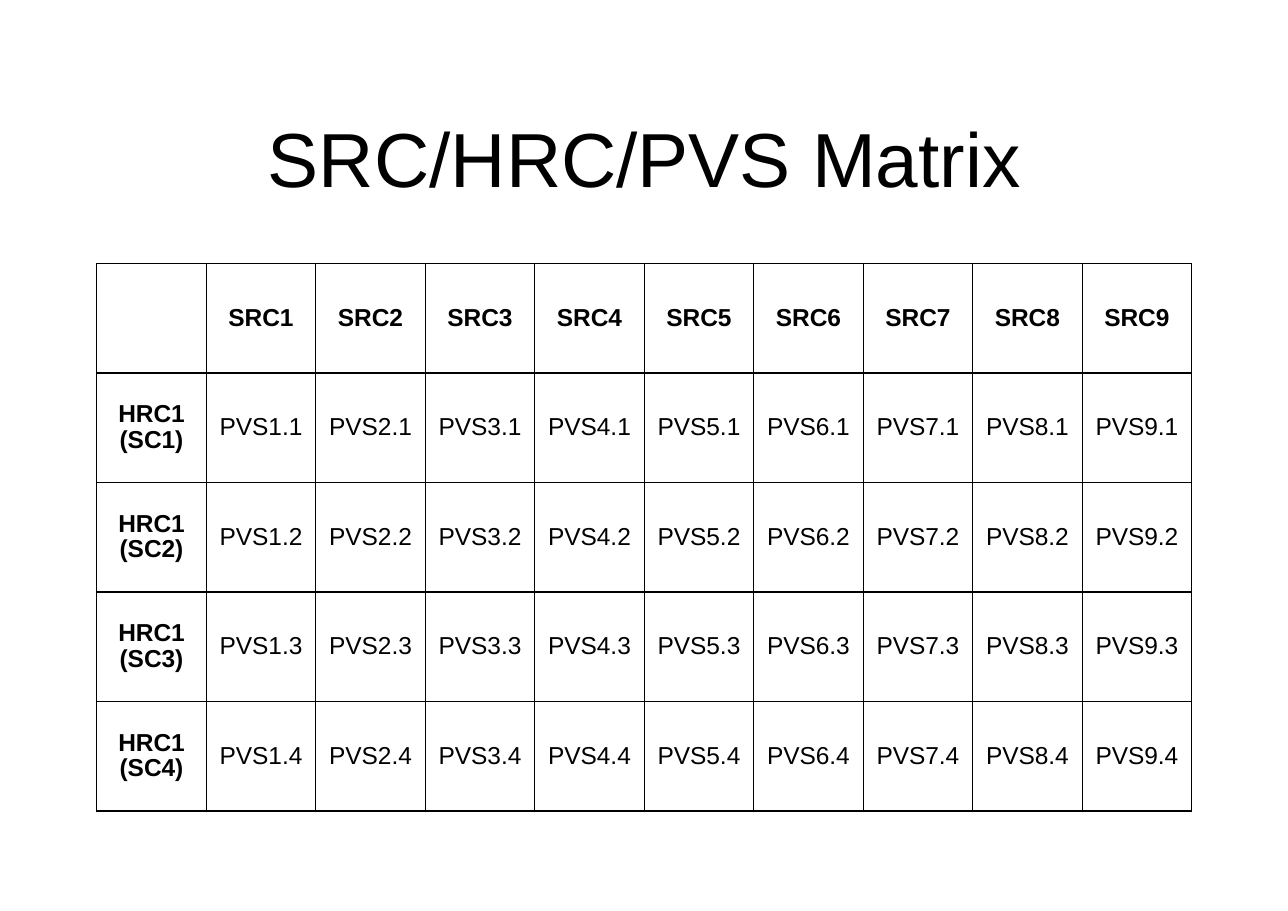
import pptx
import pptx.dml.color
import pptx.enum.text
import pptx.oxml
import pptx.oxml.ns
import pptx.util

Pt = pptx.util.Pt
CENTER = pptx.enum.text.PP_ALIGN.CENTER
MIDDLE = pptx.enum.text.MSO_ANCHOR.MIDDLE


def color(value):
    return pptx.dml.color.RGBColor.from_string(value)


class MatrixPage:
    font = "Arial"
    ink = "000000"
    paper = "FFFFFF"
    border = 1

    def __init__(self, deck):
        self.page = deck.slides.add_slide(deck.slide_layouts[5])

    def add_span(self, para, text, size, bold=False):
        para.alignment = CENTER
        span = para.add_run()
        span.text = text
        span.font.name = self.font
        span.font.size = Pt(size)
        span.font.bold = bold
        span.font.color.rgb = color(self.ink)

    def title(self, text, left, top, width, height, size):
        box = self.page.shapes.title
        box.left, box.top, box.width, box.height = map(Pt, (left, top, width, height))
        frame = box.text_frame
        frame.word_wrap = True
        frame.auto_size = pptx.enum.text.MSO_AUTO_SIZE.NONE
        frame.vertical_anchor = MIDDLE
        frame.margin_left = frame.margin_right = Pt(4.3)
        frame.margin_top = frame.margin_bottom = Pt(4.3)
        self.add_span(frame.paragraphs[0], text, size)

    def outline(self, cell):
        properties = cell._tc.get_or_add_tcPr()
        namespace = pptx.oxml.ns.nsdecls("a")
        for side in ("lnL", "lnR", "lnT", "lnB"):
            properties.append(pptx.oxml.parse_xml(
                f'<a:{side} {namespace} w="{Pt(self.border)}"><a:solidFill>'
                f'<a:srgbClr val="{self.ink}"/></a:solidFill></a:{side}>'))

    def table(self, rows, left, top, cell_size, size):
        row_count, column_count = len(rows), len(rows[0])
        table = self.page.shapes.add_table(
            row_count, column_count, Pt(left), Pt(top),
            Pt(cell_size * column_count), Pt(cell_size * row_count)).table
        table.first_row = table.horz_banding = False
        for column in table.columns:
            column.width = Pt(cell_size)
        for row in table.rows:
            row.height = Pt(cell_size)
        for row, texts in enumerate(rows):
            for column, text in enumerate(texts):
                cell = table.cell(row, column)
                self.outline(cell)
                cell.fill.solid()
                cell.fill.fore_color.rgb = color(self.paper)
                cell.vertical_anchor = MIDDLE
                if text:
                    para = cell.text_frame.paragraphs[0]
                    para.line_spacing = 0.95
                    self.add_span(para, text, size, bold=row == 0 or column == 0)


def main():
    deck = pptx.Presentation()
    deck.slide_width, deck.slide_height = Pt(841), Pt(594.7)
    matrix = MatrixPage(deck)
    matrix.title("SRC/HRC/PVS Matrix", 63.2, 52.6, 715.6, 99.4, size=50)
    sources = range(1, 10)
    rows = [[""] + [f"SRC{source}" for source in sources]]
    for circuit in range(1, 5):
        rows.append([f"HRC1 (SC{circuit})"]
                    + [f"PVS{source}.{circuit}" for source in sources])
    matrix.table(rows, 63.2, 172, cell_size=71.5, size=16)
    deck.save("out.pptx")


if __name__ == "__main__":
    main()
